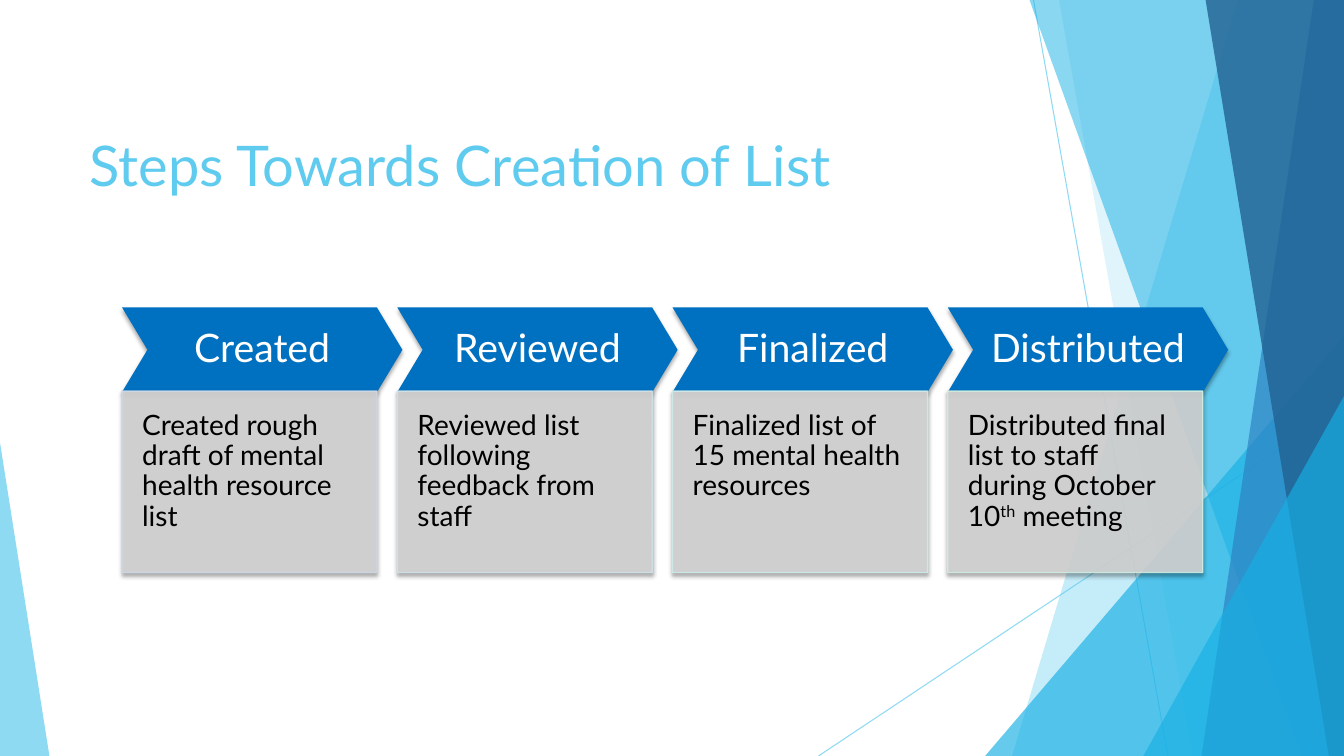
import dataclasses
import typing

import lxml.etree
import pptx
import pptx.dml.color
import pptx.enum.shapes
import pptx.enum.text
import pptx.oxml.ns
import pptx.util

SLIDE_WIDTH, SLIDE_HEIGHT = pptx.util.Inches(13.33), pptx.util.Inches(7.5)
FONT = "Lato"
SKY, CYAN, BLUE, NAVY = "5FCBEF", "17B0E4", "2E83C3", "226292"
HEADING_FILL, BODY_FILL = "0070C0", "D3D3D3"
SHAPES = pptx.enum.shapes.MSO_SHAPE
ANCHOR = pptx.enum.text.MSO_ANCHOR
ALIGN = pptx.enum.text.PP_ALIGN
qn = pptx.oxml.ns.qn

# Step grid, in percent of the slide's width and height
STEP_LEFT, STEP_PITCH = 9.08, 20.48
HEADING_TOP, HEADING_WIDTH, HEADING_HEIGHT = 40.67, 20.86, 11.2
BODY_TOP, BODY_WIDTH, BODY_HEIGHT = 51.73, 18.98, 24


# Positions are percent of the slide's width and height
@dataclasses.dataclass
class Ray:
    start: tuple[float, float]
    end: tuple[float, float]


@dataclasses.dataclass
class Band:
    """Reaches from a slanted left edge to the slide's right edge."""
    top_x: float
    bottom_x: float
    color: str
    opacity: int


@dataclasses.dataclass
class Wedge:
    """Triangle standing on the slide's bottom edge."""
    left: float
    top: float
    width: float
    apex: float
    color: str
    opacity: int


@dataclasses.dataclass
class Step:
    heading: str
    body: list[tuple[str, bool]]  # text, superscript
    border: str


RAYS = [Ray((76.9, 0), (86.9, 100)), Ray((100, 53.73), (60.9, 100))]
FACETS = [
    Band(92.1, 75.3, SKY, 36),
    Band(78.8, 88.75, SKY, 20),
    Wedge(73.3, 44.4, 26.7, 1, CYAN, 66),
    Band(76.6, 96.85, CYAN, 50),
    Band(97.75, 89.4, BLUE, 70),
    Band(89.7, 98.87, NAVY, 80),
    Wedge(85.07, 52.4, 14.93, 1, CYAN, 66),
    Wedge(0, 58.53, 3.68, 0, SKY, 70),
]
STEPS = [
    Step("Created", [("Created rough draft of mental health resource list", False)], "CDD9E9"),
    Step("Reviewed", [("Reviewed list following feedback from staff", False)], "CEE3EB"),
    Step("Finalized", [("Finalized list of 15 mental health resources", False)], "CEECEA"),
    Step("Distributed", [("Distributed final list to staff during October 10", False),
                         ("th", True), (" meeting", False)], "CFEEE0"),
]


def across(percent: float) -> int:
    return round(SLIDE_WIDTH * percent / 100)


def down(percent: float) -> int:
    return round(SLIDE_HEIGHT * percent / 100)


def rgb(color: str) -> pptx.dml.color.RGBColor:
    return pptx.dml.color.RGBColor.from_string(color)


def apply(target: typing.Any, values: dict[str, typing.Any]) -> None:
    for name, value in values.items():
        setattr(target, name, value)


def set_opacity(parent: typing.Any, opacity: int) -> None:
    color = parent.find(qn("a:solidFill")).find(qn("a:srgbClr"))
    lxml.etree.SubElement(color, qn("a:alpha"), val=str(opacity * 1000))


def paint(shape: typing.Any, color: str, opacity: int = 100, border: str = "") -> None:
    shape.fill.solid()
    shape.fill.fore_color.rgb = rgb(color)
    if opacity < 100:
        set_opacity(shape._element.spPr, opacity)
    if border:
        shape.line.color.rgb = rgb(border)
        shape.line.width = pptx.util.Pt(1)
        set_opacity(shape._element.spPr.find(qn("a:ln")), opacity)
    else:
        shape.line.fill.background()
    shape.shadow.inherit = False


def cast_shadow(shape: typing.Any) -> None:
    effects = shape._element.spPr.find(qn("a:effectLst"))
    shadow = lxml.etree.SubElement(
        effects, qn("a:outerShdw"), blurRad=str(pptx.util.Pt(3)),
        dist=str(pptx.util.Pt(2)), dir="5400000", rotWithShape="0")
    color = lxml.etree.SubElement(shadow, qn("a:srgbClr"), val="000000")
    lxml.etree.SubElement(color, qn("a:alpha"), val="35000")


def write(shape: typing.Any, runs: list[tuple[str, bool]], size: int, color: str,
          frame: dict[str, typing.Any], paragraph_format: dict[str, typing.Any]) -> None:
    apply(shape.text_frame, {"word_wrap": True, **frame})
    paragraph = shape.text_frame.paragraphs[0]
    apply(paragraph, paragraph_format)
    for text, superscript in runs:
        run = paragraph.add_run()
        run.text = text
        apply(run.font, {"name": FONT, "size": pptx.util.Pt(size)})
        run.font.color.rgb = rgb(color)
        if superscript:
            run._r.get_or_add_rPr().set("baseline", "30000")


def margins(side: float, bottom: float) -> dict[str, int]:
    values = {f"margin_{edge}": pptx.util.Inches(side) for edge in ("left", "top", "right")}
    return {**values, "margin_bottom": pptx.util.Inches(bottom)}


def draw_ray(slide: typing.Any, ray: Ray) -> None:
    connector = slide.shapes.add_connector(
        pptx.enum.shapes.MSO_CONNECTOR.STRAIGHT,
        across(ray.start[0]), down(ray.start[1]), across(ray.end[0]), down(ray.end[1]))
    connector.line.color.rgb = rgb(SKY)
    connector.line.width = pptx.util.Pt(0.75)
    properties = connector._element.spPr
    set_opacity(properties.find(qn("a:ln")), 70)
    lxml.etree.SubElement(properties, qn("a:effectLst"))


def draw_facet(slide: typing.Any, facet: Band | Wedge) -> None:
    if isinstance(facet, Band):
        builder = slide.shapes.build_freeform(across(facet.top_x), 0)
        builder.add_line_segments([(SLIDE_WIDTH, 0), (SLIDE_WIDTH, SLIDE_HEIGHT),
                                   (across(facet.bottom_x), SLIDE_HEIGHT)], close=True)
        shape = builder.convert_to_shape()
    else:
        shape = slide.shapes.add_shape(
            SHAPES.ISOSCELES_TRIANGLE, across(facet.left), down(facet.top),
            across(facet.width), down(100 - facet.top))
        shape.adjustments[0] = facet.apex
    paint(shape, facet.color, facet.opacity)


def draw_step(slide: typing.Any, column: int, step: Step) -> None:
    left = across(STEP_LEFT + column * STEP_PITCH)
    heading = slide.shapes.add_shape(
        SHAPES.CHEVRON, left, down(HEADING_TOP), across(HEADING_WIDTH), down(HEADING_HEIGHT))
    heading.adjustments[0] = 0.3
    paint(heading, HEADING_FILL)
    cast_shadow(heading)
    write(heading, [(step.heading, False)], 28, "FFFFFF",
          {"vertical_anchor": ANCHOR.MIDDLE, **margins(0.1, 0.1)},
          {"alignment": ALIGN.CENTER, "line_spacing": 0.9})

    body = slide.shapes.add_shape(
        SHAPES.RECTANGLE, left, down(BODY_TOP), across(BODY_WIDTH), down(BODY_HEIGHT))
    paint(body, BODY_FILL, 90, step.border)
    cast_shadow(body)
    write(body, step.body, 20, "000000",
          {"vertical_anchor": ANCHOR.TOP, **margins(0.2, 0.4)},
          {"alignment": ALIGN.LEFT, "line_spacing": 0.9})


def main() -> None:
    presentation = pptx.Presentation()
    apply(presentation, {"slide_width": SLIDE_WIDTH, "slide_height": SLIDE_HEIGHT})
    slide = presentation.slides.add_slide(presentation.slide_layouts[5])

    # Title
    title = slide.shapes.title
    apply(title, {"left": across(5.93), "top": down(16.53),
                  "width": across(70.5), "height": down(19.2)})
    write(title, [("Steps Towards Creation of List", False)], 40, SKY,
          {"vertical_anchor": ANCHOR.TOP, "auto_size": pptx.enum.text.MSO_AUTO_SIZE.NONE},
          {"alignment": ALIGN.LEFT})

    # Faceted backdrop
    for ray in RAYS:
        draw_ray(slide, ray)
    for facet in FACETS:
        draw_facet(slide, facet)

    # Process steps
    for column, step in enumerate(STEPS):
        draw_step(slide, column, step)

    presentation.save("out.pptx")


if __name__ == "__main__":
    main()
